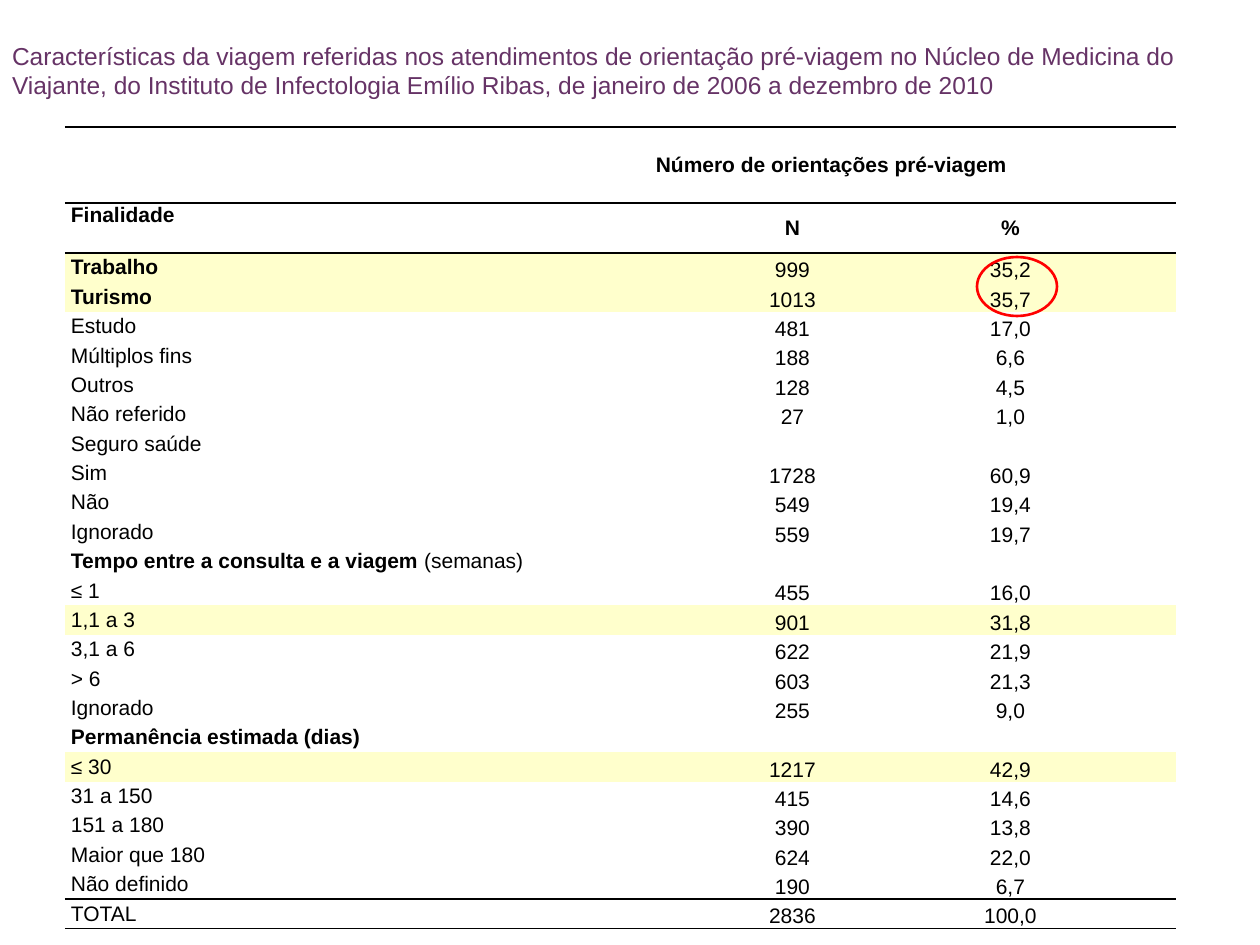
from pptx import Presentation
from pptx.dml.color import RGBColor
from pptx.enum import shapes, text
from pptx.oxml import parse_xml
from pptx.oxml.ns import nsdecls
from pptx.util import Emu, Pt

PX = 914400 / 126
COLORS = {"title": "663366", "ink": "000000", "highlight": "FFFFCC", "mark": "FF0000"}
NO_STYLE = "{2D5ABB26-0587-4C30-8999-92F81FD0307C}"
COLUMNS = (675, 105, 331)
HEADING_HEIGHT, LABELS_HEIGHT = 76, 50
PAD = 6

# Label, N, %; a bar ends the bold part of a label
ROWS = [
    ("Trabalho", "999", "35,2"),
    ("Turismo", "1013", "35,7"),
    ("Estudo", "481", "17,0"),
    ("Múltiplos fins", "188", "6,6"),
    ("Outros", "128", "4,5"),
    ("Não referido", "27", "1,0"),
    ("Seguro saúde", "", ""),
    ("Sim", "1728", "60,9"),
    ("Não", "549", "19,4"),
    ("Ignorado", "559", "19,7"),
    ("Tempo entre a consulta e a viagem |(semanas)", "", ""),
    ("≤ 1", "455", "16,0"),
    ("1,1 a 3", "901", "31,8"),
    ("3,1 a 6", "622", "21,9"),
    ("> 6", "603", "21,3"),
    ("Ignorado", "255", "9,0"),
    ("Permanência estimada (dias)", "", ""),
    ("≤ 30", "1217", "42,9"),
    ("31 a 150", "415", "14,6"),
    ("151 a 180", "390", "13,8"),
    ("Maior que 180", "624", "22,0"),
    ("Não definido", "190", "6,7"),
    ("TOTAL", "2836", "100,0"),
]
BOLD_LABELS = {"Trabalho", "Turismo", "Permanência estimada (dias)"}
HIGHLIGHTED = {"Trabalho", "Turismo", "1,1 a 3", "≤ 30"}


def px(length):
    return Emu(round(length * PX))


def rgb(name):
    return RGBColor.from_string(COLORS[name])


def write(paragraph, wording, size=12, color="ink", bold=False, align="LEFT", indent=0):
    """Write the wording; a bar ends a bold part, a newline breaks the line."""
    paragraph.alignment = getattr(text.PP_ALIGN, align)
    if indent:
        paragraph._p.get_or_add_pPr().set("marL", str(px(indent)))
    if not wording:
        paragraph._p.get_or_add_endParaRPr().set("sz", str(size * 100))
    lead, bar, rest = wording.partition("|")
    for part, part_bold in ((lead, bold or bool(bar)), (rest, bold)):
        for number, line in enumerate(part.split("\n")):
            if number:
                paragraph.add_line_break()
            if line:
                run = paragraph.add_run()
                run.text = line
                run.font.name, run.font.size = "Arial", Pt(size)
                run.font.bold = part_bold
                run.font.color.rgb = rgb(color)


def rule_cell(cell, sides):
    """Draw 1 pt lines on the given sides, T or B."""
    properties = cell._tc.get_or_add_tcPr()
    for position, side in enumerate(sides):
        properties.insert(position, parse_xml(
            f'<a:ln{side} {nsdecls("a")} w="12700"><a:solidFill>'
            f'<a:srgbClr val="{COLORS["ink"]}"/></a:solidFill></a:ln{side}>'))


def fill_cell(cell, wording, anchor="MIDDLE", sides="", highlight=False, **style):
    cell.margin_left = cell.margin_right = px(PAD)
    cell.margin_top = cell.margin_bottom = 0
    cell.vertical_anchor = getattr(text.MSO_ANCHOR, anchor)
    if highlight:
        cell.fill.solid()
        cell.fill.fore_color.rgb = rgb("highlight")
    else:
        cell.fill.background()
    rule_cell(cell, sides)
    write(cell.text_frame.paragraphs[0], wording, **style)


def add_title(slide, left, top, width, height):
    title = slide.shapes.title
    title.left, title.top, title.width, title.height = map(px, (left, top, width, height))
    frame = title.text_frame
    frame.word_wrap = True
    frame.auto_size = text.MSO_AUTO_SIZE.NONE
    frame.vertical_anchor = text.MSO_ANCHOR.TOP
    frame.margin_left = frame.margin_right = px(12)
    frame.margin_top = frame.margin_bottom = px(PAD)
    write(frame.paragraphs[0],
          "Características da viagem referidas nos atendimentos de orientação "
          "pré-viagem no Núcleo de Medicina do\nViajante, do Instituto de Infectologia "
          "Emílio Ribas, de janeiro de 2006 a dezembro de 2010",
          size=14, color="title")


def add_travel_table(slide, left, top, height):
    frame = slide.shapes.add_table(
        len(ROWS) + 2, len(COLUMNS), px(left), px(top), px(sum(COLUMNS)), px(height))
    table = frame.table
    table.first_row = table.horz_banding = False
    table._tbl.tblPr.find(f"{{{table._tbl.nsmap['a']}}}tableStyleId").text = NO_STYLE
    for column, width in zip(table.columns, COLUMNS):
        column.width = px(width)
    row_height = (height - HEADING_HEIGHT - LABELS_HEIGHT) / len(ROWS)
    heights = [HEADING_HEIGHT, LABELS_HEIGHT] + [row_height] * len(ROWS)
    for row, each in zip(table.rows, heights):
        row.height = px(each)

    # Heading over all columns, indented to stand above the figures
    table.cell(0, 0).merge(table.cell(0, 2))
    for column, heading in enumerate(("Número de orientações pré-viagem", "", "")):
        fill_cell(table.cell(0, column), heading, sides="TB", bold=True,
                  align="CENTER", indent=422 if heading else 0)

    # Column labels
    for column, label in enumerate(("Finalidade", "N", "%")):
        fill_cell(table.cell(1, column), label, sides="TB", bold=True,
                  anchor="MIDDLE" if column else "TOP",
                  align="CENTER" if column else "LEFT")

    # Figures, with the total ruled above and below
    rules = {len(ROWS): "B", len(ROWS) + 1: "TB"}
    for number, row in enumerate(ROWS, 2):
        for column, wording in enumerate(row):
            fill_cell(table.cell(number, column), wording, sides=rules.get(number, ""),
                      highlight=row[0] in HIGHLIGHTED, bold=wording in BOLD_LABELS,
                      anchor="BOTTOM" if column else "MIDDLE",
                      align="CENTER" if column else "LEFT")


def add_ring(slide, left, top, width, height):
    ring = slide.shapes.add_shape(
        shapes.MSO_SHAPE.OVAL, px(left), px(top), px(width), px(height))
    ring.shadow.inherit = False
    ring.fill.background()
    ring.line.color.rgb = rgb("mark")
    ring.line.width = Pt(1.5)


def main():
    deck = Presentation()
    deck.slide_width, deck.slide_height = px(1260), px(945)
    slide = deck.slides.add_slide(deck.slide_layouts[5])
    add_title(slide, 0, 35, 1300, 110)
    add_travel_table(slide, 65, 127, 802)
    add_ring(slide, 977, 257, 80, 59)
    deck.save("out.pptx")


if __name__ == "__main__":
    main()
